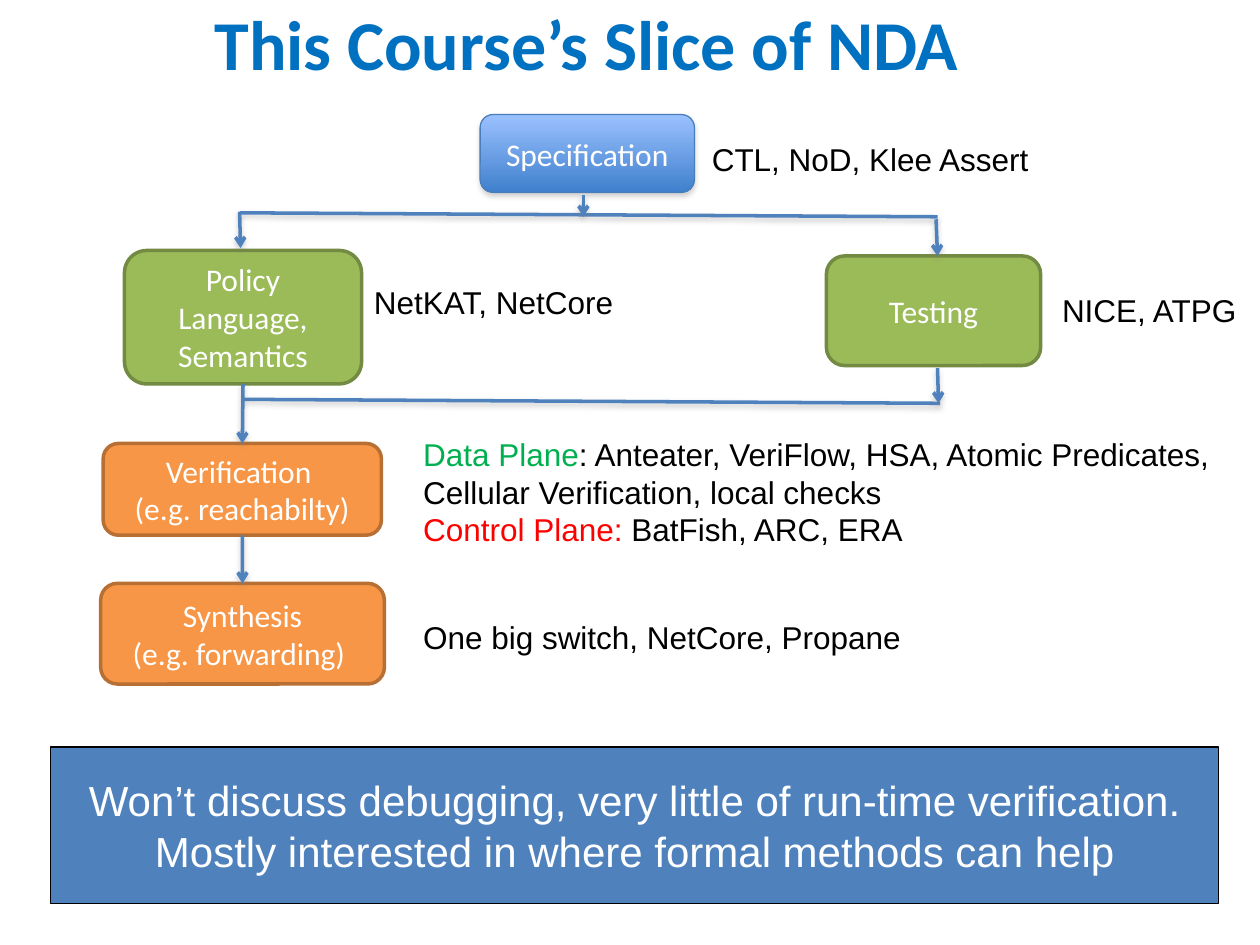
from lxml.etree import SubElement
from pptx import Presentation
from pptx.dml.color import RGBColor
from pptx.enum.shapes import MSO_CONNECTOR, MSO_SHAPE
from pptx.enum.text import MSO_ANCHOR, MSO_AUTO_SIZE, PP_ALIGN
from pptx.oxml.ns import qn
from pptx.util import Cm, Pt

WHITE = RGBColor(0xFF, 0xFF, 0xFF)
BLACK = RGBColor(0, 0, 0)
TITLE = RGBColor(0x00, 0x70, 0xC0)
BLUE = RGBColor(0x4F, 0x81, 0xBD)
EDGE = RGBColor(0x4A, 0x7E, 0xBB)
LIGHT = RGBColor(0x9B, 0xC1, 0xFF)
DEEP = RGBColor(0x3F, 0x80, 0xCD)
OLIVE = RGBColor(0x9B, 0xBB, 0x59)
MOSS = RGBColor(0x73, 0x8A, 0x42)
ORANGE = RGBColor(0xF7, 0x96, 0x46)
BROWN = RGBColor(0xB7, 0x6F, 0x34)
GREEN = RGBColor(0x00, 0xB0, 0x50)
RED = RGBColor(0xFF, 0, 0)


class Deck:
    head = "Calibri"
    body = "Arial"

    def __init__(self):
        self.prs = Presentation()
        self.prs.slide_width, self.prs.slide_height = Cm(25.4), Cm(19.05)
        self.slide = self.prs.slides.add_slide(self.prs.slide_layouts[5])

    def put_text(self, frame, paras, font, size, color, align, bold=False):
        """Fill a frame; each paragraph is a list of (text, color or None)."""
        for i, runs in enumerate(paras):
            para = frame.paragraphs[0] if i == 0 else frame.add_paragraph()
            para.alignment = align
            for text, tint in runs:
                run = para.add_run()
                run.text = text
                run.font.name, run.font.size = font, Pt(size)
                run.font.bold = bold
                run.font.color.rgb = tint or color

    def shade(self, props, alpha, dist):
        """Put a soft shadow below a shape or line."""
        effects = props.find(qn("a:effectLst"))
        if effects is None:
            effects = SubElement(props, qn("a:effectLst"))
        outer = SubElement(effects, qn("a:outerShdw"), blurRad=str(Pt(3.1)),
                           dist=str(Pt(dist)), dir="5400000", rotWithShape="0")
        color = SubElement(outer, qn("a:srgbClr"), val="808080")
        SubElement(color, qn("a:alpha"), val=str(alpha * 1000))

    def title(self, text, area):
        shape = self.slide.shapes.title
        shape.left, shape.top, shape.width, shape.height = map(Cm, area)
        shape.text_frame.vertical_anchor = MSO_ANCHOR.MIDDLE
        self.put_text(shape.text_frame, [[(text, None)]], self.head, 40,
                      TITLE, PP_ALIGN.CENTER, True)

    def block(self, kind, lines, area, fill, edge, width, font, size):
        shape = self.slide.shapes.add_shape(kind, *map(Cm, area))
        shape.shadow.inherit = False
        shape.fill.solid()
        shape.fill.fore_color.rgb = fill
        shape.line.color.rgb, shape.line.width = edge, Pt(width)
        shape.text_frame.vertical_anchor = MSO_ANCHOR.MIDDLE
        self.put_text(shape.text_frame, [[(line, None)] for line in lines],
                      font, size, WHITE, PP_ALIGN.CENTER)
        return shape

    def step(self, lines, area, fill, edge, width=2):
        return self.block(MSO_SHAPE.ROUNDED_RECTANGLE, lines, area, fill,
                          edge, width, self.head, 18)

    def glossy(self, lines, area):
        """Add a step with a gradient and a shadow."""
        shape = self.step(lines, area, LIGHT, EDGE, 0.75)
        shape.fill.gradient()
        shape.fill.gradient_angle = 270
        for stop, color in zip(shape.fill.gradient_stops, (LIGHT, DEEP)):
            stop.color.rgb = color
        self.shade(shape._element.spPr, 35, 1.8)

    def banner(self, lines, area):
        shape = self.block(MSO_SHAPE.RECTANGLE, lines, area, BLUE, BLACK,
                           0.75, self.body, 24)
        shape.text_frame.word_wrap = False

    def label(self, paras, area):
        frame = self.slide.shapes.add_textbox(*map(Cm, area)).text_frame
        frame.word_wrap = False
        frame.auto_size = MSO_AUTO_SIZE.SHAPE_TO_FIT_TEXT
        self.put_text(frame, paras, self.body, 18, BLACK, PP_ALIGN.LEFT)

    def line(self, ends, arrow=True):
        link = self.slide.shapes.add_connector(MSO_CONNECTOR.STRAIGHT,
                                               *map(Cm, ends))
        link.line.color.rgb, link.line.width = BLUE, Pt(2)
        props = link._element.spPr
        if arrow:
            SubElement(props.find(qn("a:ln")), qn("a:tailEnd"), type="arrow")
        self.shade(props, 38, 1.6)
        return link

    def join(self, upper, lower):
        link = self.line((0, 0, 0, 0))
        link.begin_connect(upper, 2)
        link.end_connect(lower, 0)


def main():
    deck = Deck()
    deck.title("This Course’s Slice of NDA", (0.61, -0.74, 22.43, 3.18))

    deck.glossy(["Specification"], (9.68, 2.31, 4.32, 1.57))
    policy = deck.step(["Policy Language, Semantics"],
                       (2.51, 5.05, 4.78, 2.69), OLIVE, MOSS)
    deck.step(["Testing"], (16.66, 5.16, 4.32, 2.21), OLIVE, MOSS)
    verify = deck.step(["Verification ", "(e.g. reachabilty)"],
                       (2.08, 8.94, 5.61, 1.85), ORANGE, BROWN)
    synth = deck.step(["Synthesis", "(e.g. forwarding) "],
                      (2.03, 11.76, 5.72, 2.03), ORANGE, BROWN)
    deck.banner(
        ["Won’t discuss debugging, very little of run-time verification.",
         "Mostly interested in where formal methods can help"],
        (1.02, 15.06, 23.55, 3.15))

    for text, area in (
        ("CTL, NoD, Klee Assert", (14.1, 2.69, 6.96, 1.02)),
        ("NetKAT, NetCore", (7.29, 5.59, 5.38, 1.02)),
        ("One big switch, NetCore, Propane", (8.28, 12.34, 10.41, 1.02)),
        ("NICE, ATPG", (21.16, 5.74, 4.24, 1.02)),
    ):
        deck.label([[(text, None)]], area)
    deck.label(
        [[("Data Plane", GREEN),
          (": Anteater, VeriFlow, HSA, Atomic Predicates,", None)],
         [("Cellular Verification, local checks", None)],
         [("Control Plane: ", RED), ("BatFish, ARC, ERA", None)]],
        (8.28, 8.64, 16.69, 2.57))

    for rail in ((4.83, 4.29, 18.9, 4.37), (4.9, 8.05, 18.95, 8.13)):
        deck.line(rail, arrow=False)
    for drop in ((11.76, 3.94, 11.76, 4.37), (4.83, 4.27, 4.85, 5.0),
                 (18.87, 4.42, 18.9, 5.16), (18.9, 7.42, 18.92, 8.13)):
        deck.line(drop)
    deck.join(policy, verify)
    deck.join(verify, synth)

    deck.prs.save("out.pptx")


if __name__ == "__main__":
    main()
